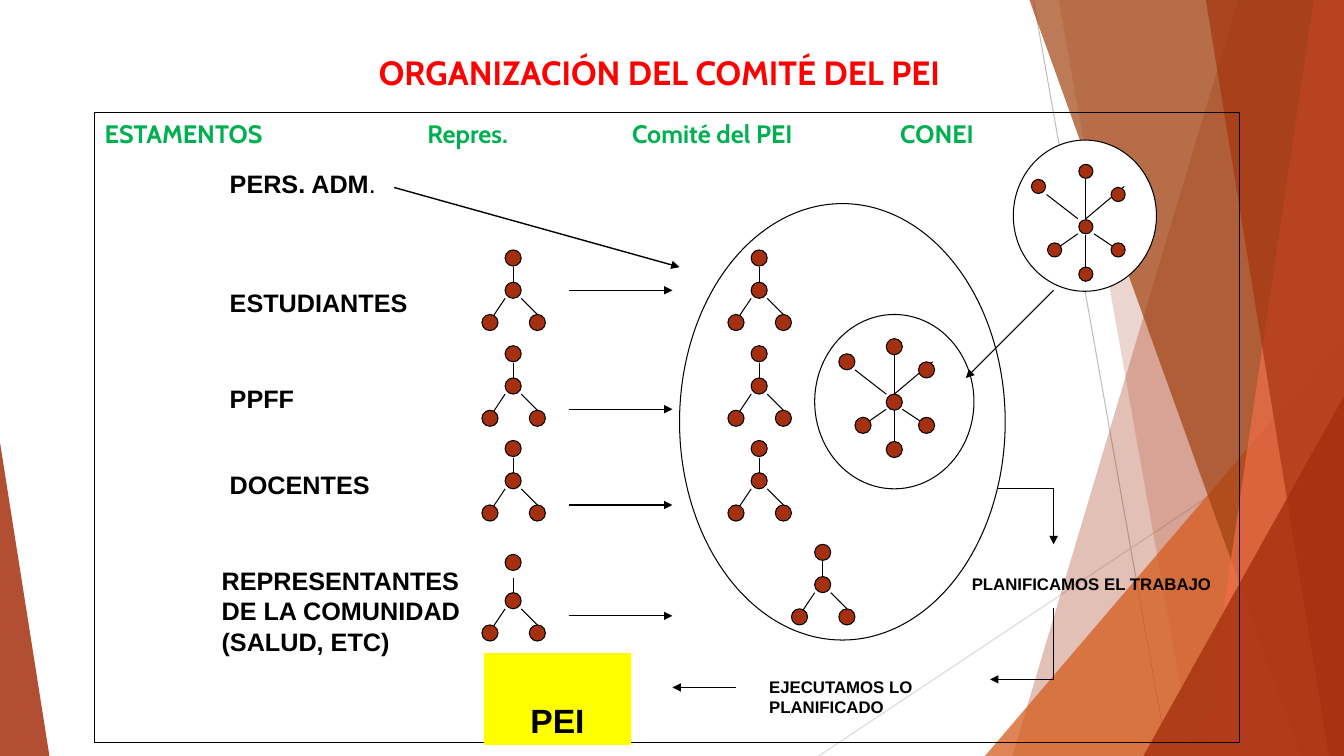
from lxml import etree
from pptx import Presentation
from pptx.dml.color import RGBColor
from pptx.enum.shapes import MSO_CONNECTOR, MSO_SHAPE
from pptx.enum.text import MSO_ANCHOR, PP_ALIGN
from pptx.oxml.ns import qn
from pptx.util import Inches, Pt

STRAIGHT = MSO_CONNECTOR.STRAIGHT
OVAL, RECTANGLE = MSO_SHAPE.OVAL, MSO_SHAPE.RECTANGLE
TRIANGLE = MSO_SHAPE.ISOSCELES_TRIANGLE
TOP, MIDDLE, BOTTOM = MSO_ANCHOR.TOP, MSO_ANCHOR.MIDDLE, MSO_ANCHOR.BOTTOM
LEFT, CENTER = PP_ALIGN.LEFT, PP_ALIGN.CENTER

COLORS = {
    "black": "000000", "white": "FFFFFF", "red": "FF0000", "green": "00B050",
    "yellow": "FFFF00", "rust": "A5300F", "orange": "D55816", "brown": "A04210",
    "coral": "EE6E4A", "gray": "BFBFBF", "light_gray": "D9D9D9",
}

TITLE = "ORGANIZACIÓN DEL COMITÉ DEL PEI"
HEADINGS = ["ESTAMENTOS", "Repres.", "Comité del PEI", "CONEI"]
HEADING_TABS = [3.2, 5.23, 7.89]
LABELS = [
    ("PERS. ADM.", 2.18, 1.62, 2.12, 0.4, 18),
    ("ESTUDIANTES", 2.18, 2.8, 2.12, 0.4, 18),
    ("PPFF", 2.18, 3.75, 2.12, 0.4, 18),
    ("DOCENTES", 2.18, 4.61, 2.12, 0.4, 18),
    ("REPRESENTANTES DE LA COMUNIDAD (SALUD, ETC)", 2.1, 5.56, 2.76, 1.01, 18),
    ("PLANIFICAMOS EL TRABAJO", 9.54, 5.64, 2.67, 0.3, 12),
    ("EJECUTAMOS LO PLANIFICADO", 7.53, 6.66, 2.5, 0.51, 12),
]

BACK_LINES = [((10.25, 0), (11.58, 7.5), "gray"),
              ((13.33, 4.03), (8.12, 7.5), "light_gray")]
BACK_SHAPES = [
    ("band", (12.28, 13.33, 13.33, 10.04), "rust", 30),
    ("band", (10.5, 13.33, 13.33, 11.83), "rust", 20),
    ("triangle", (9.77, 3.33, 3.56, 4.17, 1), "orange", 72),
    ("band", (10.21, 13.33, 13.33, 12.91), "brown", 70),
    ("band", (13.03, 13.33, 13.33, 11.92), "coral", 70),
    ("band", (11.96, 13.33, 13.33, 13.18), "rust", 65),
    ("triangle", (11.34, 3.93, 1.99, 3.57, 1), "rust", 80),
    ("triangle", (0, 4.39, 0.49, 3.11, 0), "rust", 85),
]

TREE_ROWS = [2.88, 3.83, 4.77]
TREES = [(x, y, 0.32) for x in (5.09, 7.53) for y in TREE_ROWS]
TREES += [(5.09, 5.96, 0.38), (8.16, 5.8, 0.32)]
TREE_LINES = [((0, -0.23), (0, 0)), ((-0.08, 0.08), (-0.24, 0.32)),
              ((0.08, 0.08), (0.24, 0.24))]

STARS = [((8.08, 3.12, 1.58, 1.73), (8.87, 3.99), 0.16),
         ((10.05, 1.39, 1.42, 1.5), (10.77, 2.25), 0.14)]
STAR_LINES = [((-0.08, -0.08), (-0.39, -0.32)), ((0, -0.08), (0.38, -0.4)),
              ((0.08, 0.07), (0.32, 0.23)), ((-0.08, 0.07), (-0.31, 0.23)),
              ((0, 0.08), (0, 0.55)), ((0, -0.55), (0, -0.08))]
STAR_DOTS = [(-0.47, -0.4), (0, -0.55), (0.32, -0.32),
             (0.32, 0.23), (0, 0.47), (-0.31, 0.23)]

ROW_ARROWS = [((5.64, y), (6.67, y)) for y in (2.88, 4.06, 5.01, 6.11)]
FLOW_ARROWS = [((10.45, 2.88), (9.58, 3.75)), ((10.45, 4.85), (10.45, 5.4)),
               ((10.45, 6.74), (9.82, 6.74)), ((7.3, 6.82), (6.67, 6.82))]
FLOW_LINES = [((9.9, 4.85), (10.45, 4.85)), ((10.45, 6.03), (10.45, 6.74))]

deck = Presentation()
deck.slide_width, deck.slide_height = Inches(13.33), Inches(7.5)
page = deck.slides.add_slide(deck.slide_layouts[5])


def rgb(name):
    return RGBColor.from_string(COLORS[name])


def style(shape, fill=None, line=None, opacity=None):
    shape.shadow.inherit = False
    if fill:
        shape.fill.solid()
        shape.fill.fore_color.rgb = rgb(fill)
    else:
        shape.fill.background()
    if opacity:
        color = shape.fill._xPr.find(qn("a:solidFill"))[0]
        etree.SubElement(color, qn("a:alpha"), val=str(opacity * 1000))
    if line:
        shape.line.color.rgb = rgb(line)
        shape.line.width = Pt(0.75)
    else:
        shape.line.fill.background()


def add_box(kind, bounds, fill=None, line=None):
    shape = page.shapes.add_shape(kind, *map(Inches, bounds))
    style(shape, fill, line)
    return shape


def add_dot(x, y, size):
    add_box(OVAL, (x - size / 2, y - size / 2, size, size), "rust", "black")


def add_line(start, end, color="black", arrow=False, width=0.75):
    line = page.shapes.add_connector(STRAIGHT, *map(Inches, (*start, *end)))
    line.line.color.rgb = rgb(color)
    line.line.width = Pt(width)
    if arrow:
        etree.SubElement(line.line._get_or_add_ln(), qn("a:tailEnd"), type="triangle")
    etree.SubElement(line._element.spPr, qn("a:effectLst"))


def add_spokes(center, spokes):
    x, y = center
    for (x1, y1), (x2, y2) in spokes:
        add_line((x + x1, y + y1), (x + x2, y + y2))


def set_text(shape, text, font, size, color, align=LEFT, anchor=TOP):
    frame = shape.text_frame
    frame.word_wrap = True
    frame.vertical_anchor = anchor
    frame.text = text
    para = frame.paragraphs[0]
    para.alignment = align
    for span in para.runs:
        span.font.name, span.font.size = font, Pt(size)
        span.font.bold = True
        span.font.color.rgb = rgb(color)
    return para


for start, end, color in BACK_LINES:
    add_line(start, end, color)
for kind, place, color, opacity in BACK_SHAPES:
    if kind == "band":
        corners = list(zip(map(Inches, place), map(Inches, (0, 0, 7.5, 7.5))))
        builder = page.shapes.build_freeform(*corners[0])
        builder.add_line_segments(corners[1:], close=True)
        shape = builder.convert_to_shape()
    else:
        shape = add_box(TRIANGLE, place[:4])
        shape.adjustments[0] = place[4]
    style(shape, color, opacity=opacity)

title = page.shapes.title
title.left, title.top, title.width, title.height = map(Inches, (2.04, 0.46, 9, 0.51))
set_text(title, TITLE, "Cabin", 24, "red", CENTER, MIDDLE)

board = add_box(RECTANGLE, (0.94, 1.12, 11.35, 6.25), line="black")
para = set_text(board, "\t".join(HEADINGS), "Cabin", 18, "green")
tabs = etree.SubElement(para._p.get_or_add_pPr(), qn("a:tabLst"))
for stop in HEADING_TABS:
    etree.SubElement(tabs, qn("a:tab"), pos=str(Inches(stop)), algn="l")

for text, left, top, width, height, size in LABELS:
    box = page.shapes.add_textbox(*map(Inches, (left, top, width, height)))
    para = set_text(box, text.rstrip("."), "Arial", size, "black")
    if text.endswith("."):
        span = para.add_run()
        span.text = "."
        span.font.name, span.font.size = "Arial", Pt(size)
        span.font.color.rgb = rgb("black")

add_box(OVAL, (6.74, 2.02, 3.23, 4.33), line="black")
for x, y, rise in TREES:
    add_spokes((x, y), TREE_LINES)
    for dx, dy in [(0, -rise), (0, 0), (-0.23, 0.32), (0.24, 0.32)]:
        add_dot(x + dx, y + dy, 0.16)

for bounds, (x, y), size in STARS:
    add_box(OVAL, bounds, "white", "black")
    add_dot(x, y, size)
    add_spokes((x, y), STAR_LINES)
    for dx, dy in STAR_DOTS:
        add_dot(x + dx, y + dy, size)

for start, end in FLOW_LINES:
    add_line(start, end)
for start, end in ROW_ARROWS + FLOW_ARROWS:
    add_line(start, end, arrow=True)
add_line((3.91, 1.86), (6.74, 2.65), arrow=True, width=1)

result = add_box(RECTANGLE, (4.8, 6.48, 1.46, 0.91), "yellow")
set_text(result, "PEI", "Arial", 24, "black", CENTER, BOTTOM)

deck.save("out.pptx")
